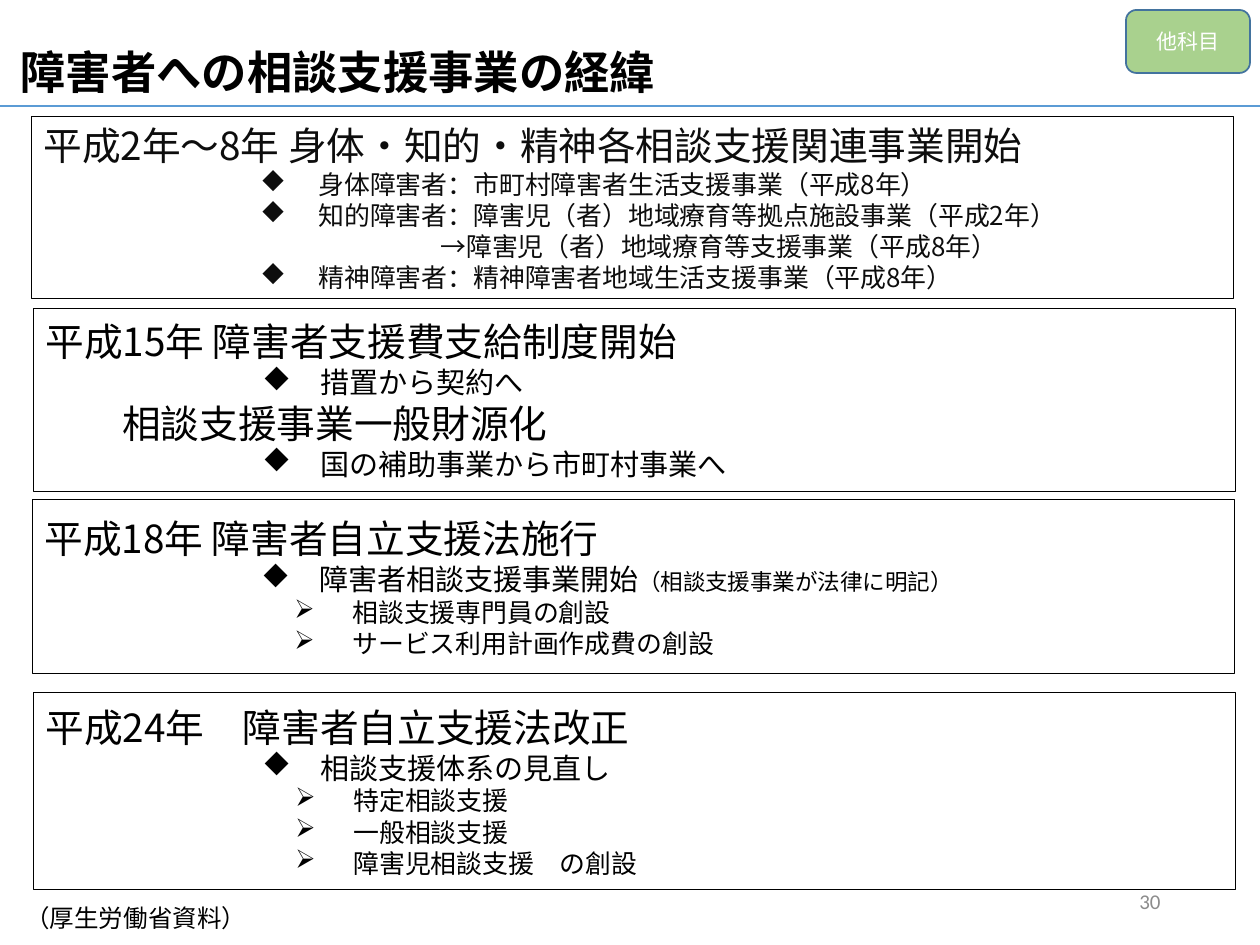
from lxml.etree import SubElement
from pptx import Presentation
from pptx.dml.color import RGBColor
from pptx.enum.shapes import MSO_CONNECTOR, MSO_SHAPE
from pptx.enum.text import MSO_ANCHOR, PP_ALIGN
from pptx.oxml.ns import qn
from pptx.util import Emu, Pt

EMU_PER_PIXEL = 914400 / 126
COLORS = {"black": "000000", "ink": "0D0D0D", "white": "FFFFFF", "rule": "5B9BD5",
          "grey": "8C8C8C", "green": "A9D18E", "badge_line": "43739E"}
CJK, LATIN = "Noto Sans CJK JP", "Calibri"
HEAD, LARGE, MEDIUM, SMALL = 22.1, 16.6, 14.8, 12.9
# Wingdings characters: diamond and arrowhead
DIAMOND, ARROW = "u", "Ø"
HANGING = 58


def px(pixels):
    return Emu(round(pixels * EMU_PER_PIXEL))


def rgb(name):
    return RGBColor.from_string(COLORS[name])


class SlideBuilder:
    def __init__(self, slide):
        self.slide = slide

    def style_run(self, run, size, color, font=CJK, bold=False):
        run.font.size = Pt(size)
        run.font.bold = bold
        run.font.name = font
        run.font.color.rgb = rgb(color)
        SubElement(run._r.get_or_add_rPr(), qn("a:ea"), typeface=CJK)

    def indent(self, paragraph, margin, bullet=None):
        properties = paragraph._p.get_or_add_pPr()
        properties.set("marL", str(px(margin)))
        properties.set("indent", str(px(-HANGING) if bullet else 0))
        if bullet:
            SubElement(properties, qn("a:buFont"), typeface="Wingdings")
            SubElement(properties, qn("a:buChar"), char=bullet)

    def shape(self, preset, left, top, width, height, fill, line, line_width):
        shape = self.slide.shapes.add_shape(preset, px(left), px(top), px(width), px(height))
        shape.shadow.inherit = False
        shape.fill.solid()
        shape.fill.fore_color.rgb = rgb(fill)
        shape.line.color.rgb = rgb(line)
        shape.line.width = Pt(line_width)
        shape.text_frame.vertical_anchor = MSO_ANCHOR.MIDDLE
        return shape

    def label(self, frame, text, size, color, font=LATIN, bold=False, align=PP_ALIGN.LEFT):
        frame.text = text
        paragraph = frame.paragraphs[0]
        paragraph.alignment = align
        self.style_run(paragraph.runs[0], size, color, font, bold)
        return paragraph

    def text(self, left, top, width, height, *style, anchor=MSO_ANCHOR.MIDDLE, **options):
        box = self.slide.shapes.add_textbox(px(left), px(top), px(width), px(height))
        box.text_frame.word_wrap = True
        box.text_frame.vertical_anchor = anchor
        return self.label(box.text_frame, *style, **options)

    def badge(self, left, top, width, height, text):
        shape = self.shape(MSO_SHAPE.ROUNDED_RECTANGLE, left, top, width, height,
                           "green", "badge_line", 1)
        self.label(shape.text_frame, text, 12, "white", align=PP_ALIGN.CENTER)

    def section(self, left, top, height, color, rows):
        shape = self.shape(MSO_SHAPE.RECTANGLE, left, top, 1202, height, "white", "black", 0.5)
        frame = shape.text_frame
        for index, (margin, bullet, *runs) in enumerate(rows):
            paragraph = frame.add_paragraph() if index else frame.paragraphs[0]
            paragraph.alignment = PP_ALIGN.LEFT
            self.indent(paragraph, margin, bullet)
            for text, size in runs:
                run = paragraph.add_run()
                run.text = text
                self.style_run(run, size, color)

    def rule(self, y, width, color, line_width):
        line = self.slide.shapes.add_connector(MSO_CONNECTOR.STRAIGHT, 0, px(y), px(width), px(y))
        line.line.color.rgb = rgb(color)
        line.line.width = Pt(line_width)
        SubElement(line._element.spPr, qn("a:effectLst"))


def head(text, margin=0):
    return margin, None, (text, HEAD)


def point(text, size, *more):
    return 275, DIAMOND, (text, size), *more


def detail(text):
    return 308, ARROW, (text, MEDIUM)


# Left, top, height, text colour and rows of each period
SECTIONS = [
    (31, 116, 183, "ink", [
        head("平成2年〜8年 身体・知的・精神各相談支援関連事業開始"),
        point("身体障害者：市町村障害者生活支援事業（平成8年）", MEDIUM),
        point("知的障害者：障害児（者）地域療育等拠点施設事業（平成2年）", MEDIUM),
        (397, None, ("→障害児（者）地域療育等支援事業（平成8年）", MEDIUM)),
        point("精神障害者：精神障害者地域生活支援事業（平成8年）", MEDIUM)]),
    (33, 308, 183, "black", [
        head("平成15年 障害者支援費支給制度開始"),
        point("措置から契約へ", LARGE),
        head("相談支援事業一般財源化", 77),
        point("国の補助事業から市町村事業へ", LARGE)]),
    (32, 500, 174, "black", [
        head("平成18年 障害者自立支援法施行"),
        point("障害者相談支援事業開始", LARGE, ("（相談支援事業が法律に明記）", SMALL)),
        detail("相談支援専門員の創設"),
        detail("サービス利用計画作成費の創設")]),
    (33, 692, 198, "black", [
        head("平成24年　障害者自立支援法改正"),
        point("相談支援体系の見直し", LARGE),
        detail("特定相談支援"),
        detail("一般相談支援"),
        detail("障害児相談支援　の創設")]),
]

presentation = Presentation()
presentation.slide_width, presentation.slide_height = px(1260), px(945)
builder = SlideBuilder(presentation.slides.add_slide(presentation.slide_layouts[6]))

# Title and rule
title = builder.text(8, 52, 1228, 45, "障害者への相談支援事業の経緯", 25.9, "black",
                     font=CJK, bold=True)
title.line_spacing = 0.9
builder.rule(106, 1260, "rule", 1.5)

# Periods
for section in SECTIONS:
    builder.section(*section)

# Footer and badge
builder.text(890, 876, 283, 50, "30", 12, "grey", align=PP_ALIGN.RIGHT)
builder.text(13, 897, 271, 43, "（厚生労働省資料）", 14, "black", anchor=MSO_ANCHOR.TOP)
builder.badge(1126, 10, 124, 63, "他科目")

presentation.save("out.pptx")
